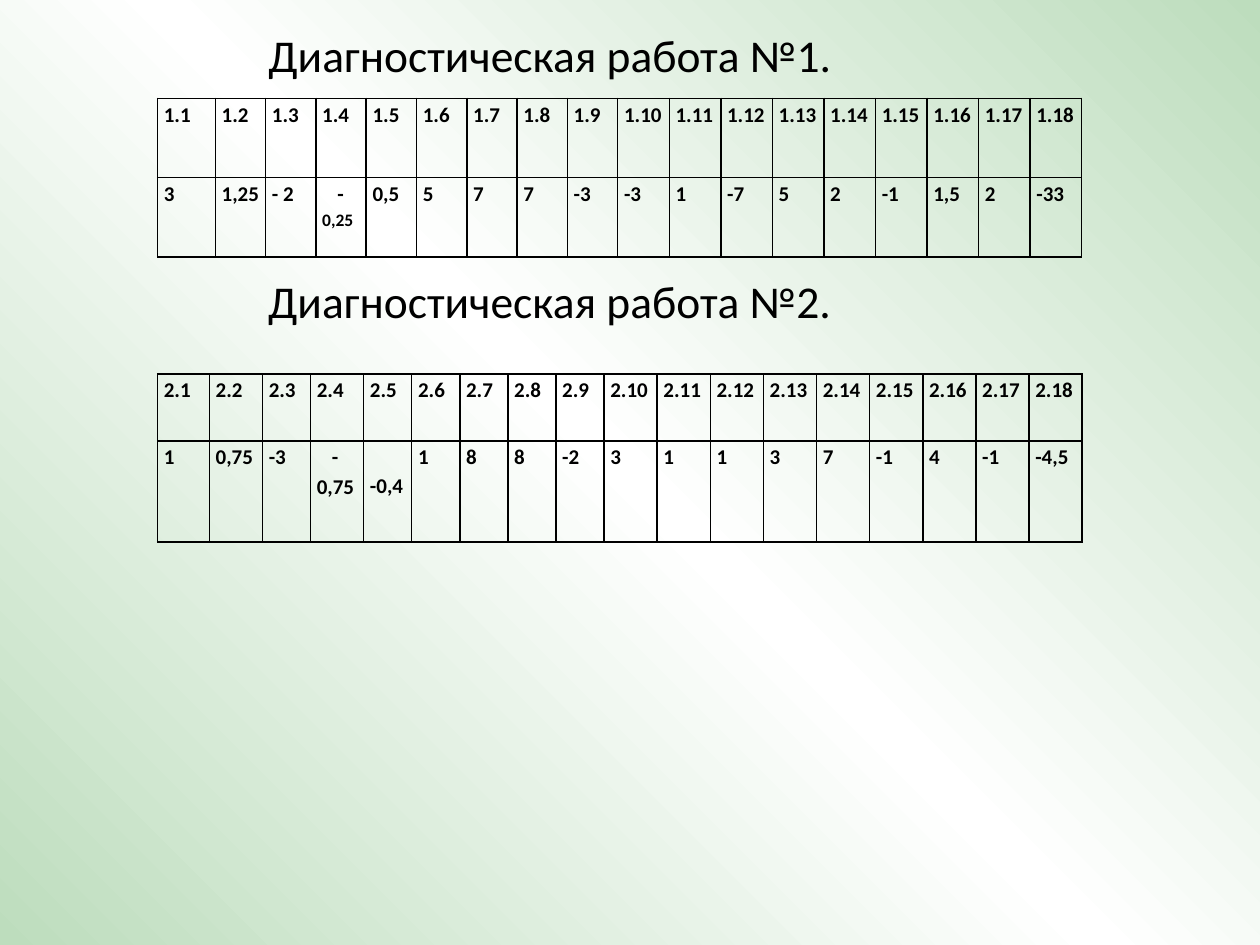
from copy import deepcopy

from pptx import Presentation
from pptx.dml.color import RGBColor
from pptx.enum.text import MSO_ANCHOR as Anchor, MSO_AUTO_SIZE as AutoSize, PP_ALIGN as Align
from pptx.oxml import parse_xml
from pptx.oxml.ns import nsdecls, qn
from pptx.util import Inches, Pt

FONT, BLACK, GREEN, WHITE = "Calibri", "000000", "BDDDBD", "FFFFFF"
TABLE_LEFT, TABLE_WIDTH = 1.25, 7.34
HEADING_LEFT, HEADING_HEIGHT = 2.03, 0.54
PAD, MINUS_INDENT, SECOND_LINE = 0.05, 0.12, 0.23
COUNT = 18

WORKS = [
    {
        "heading": "Диагностическая работа №1.",
        "heading_top": 0.16,
        "heading_width": 5,
        "table_top": 0.78,
        "rows": [0.63, 0.63],
        "shares": [0.46] + [0.4] * 8 + [0.41] * 9,
        "answers": ["3", "1,25", "- 2", "- 0,25", "0,5", "5", "7", "7", "-3",
                    "-3", "1", "-7", "5", "2", "-1", "1,5", "2", "-33"],
        "indented": 4,
        "small_number": True,
        "lowered": None,
    },
    {
        "heading": "Диагностическая работа №2.",
        "heading_top": 2.11,
        "heading_width": 5.63,
        "table_top": 2.97,
        "rows": [0.53, 0.8],
        "shares": [0.41, 0.42, 0.38, 0.42] + [0.38] * 5 + [0.42] * 9,
        "answers": ["1", "0,75", "-3", "- 0,75", "-0,4", "1", "8", "8", "-2",
                    "3", "1", "1", "3", "7", "-1", "4", "-1", "-4,5"],
        "indented": 4,
        "small_number": False,
        "lowered": 5,
    },
]


def color(value):
    return RGBColor.from_string(value)


def style(font, size, bold):
    font.name, font.size, font.bold = FONT, Pt(size), bold
    font.color.rgb = color(BLACK)


def paint_background(page):
    fill = page.background.fill
    fill.gradient()
    fill.gradient_angle = 45
    stops = page.element.find(".//" + qn("a:gsLst"))
    stops.insert(1, deepcopy(stops[0]))
    for stop, position, value in zip(fill.gradient_stops, (0, 0.5, 1), (GREEN, WHITE, GREEN)):
        stop.position = position
        stop.color.rgb = color(value)


def write_heading(box, work):
    box.left, box.top = Inches(HEADING_LEFT), Inches(work["heading_top"])
    box.width, box.height = Inches(work["heading_width"]), Inches(HEADING_HEIGHT)
    frame = box.text_frame
    frame.text = work["heading"]
    frame.word_wrap = True
    frame.auto_size = AutoSize.SHAPE_TO_FIT_TEXT
    frame.vertical_anchor = Anchor.MIDDLE
    frame.paragraphs[0].alignment = Align.LEFT
    style(frame.paragraphs[0].font, 26, False)


def format_cell(cell, text):
    cell.text = text
    cell.margin_left = cell.margin_right = Inches(PAD)
    cell.margin_top = cell.margin_bottom = 0
    para = cell.text_frame.paragraphs[0]
    para.line_spacing = 1.15
    style(para.font, 12, True)
    properties = cell._tc.get_or_add_tcPr()
    for side in ("lnL", "lnR", "lnT", "lnB"):
        properties.append(parse_xml(
            f'<a:{side} {nsdecls("a")} w="12700"><a:solidFill>'
            f'<a:srgbClr val="{BLACK}"/></a:solidFill></a:{side}>'))
    cell.fill.background()


def add_answers(page, number, work):
    rows, shares = work["rows"], work["shares"]
    table = page.shapes.add_table(
        len(rows), COUNT, Inches(TABLE_LEFT), Inches(work["table_top"]),
        Inches(TABLE_WIDTH), Inches(sum(rows))).table
    table.first_row = table.horz_banding = False
    for row, height in zip(table.rows, rows):
        row.height = Inches(height)
    for column, share in zip(table.columns, shares):
        column.width = Inches(TABLE_WIDTH * share / sum(shares))
    labels = [f"{number}.{task}" for task in range(1, COUNT + 1)]
    for row, texts in enumerate((labels, work["answers"])):
        for column, text in enumerate(texts):
            format_cell(table.cell(row, column), text)

    para = table.cell(1, work["indented"] - 1).text_frame.paragraphs[0]
    para._p.get_or_add_pPr().set("indent", str(Inches(MINUS_INDENT)))
    if work["small_number"]:
        minus, digits = para.text.split()
        para.runs[0].text = minus + " "
        span = para.add_run()
        span.text = digits
        span.font.size = Pt(10)
    if work["lowered"]:
        table.cell(1, work["lowered"] - 1).margin_top = Inches(SECOND_LINE)


def main():
    deck = Presentation()
    deck.slide_width, deck.slide_height = Inches(10), Inches(7.5)
    page = deck.slides.add_slide(deck.slide_layouts[5])
    paint_background(page)
    for number, work in enumerate(WORKS, 1):
        box = page.shapes.title if number == 1 else page.shapes.add_textbox(0, 0, 0, 0)
        write_heading(box, work)
        add_answers(page, number, work)
    deck.save("out.pptx")


if __name__ == "__main__":
    main()
